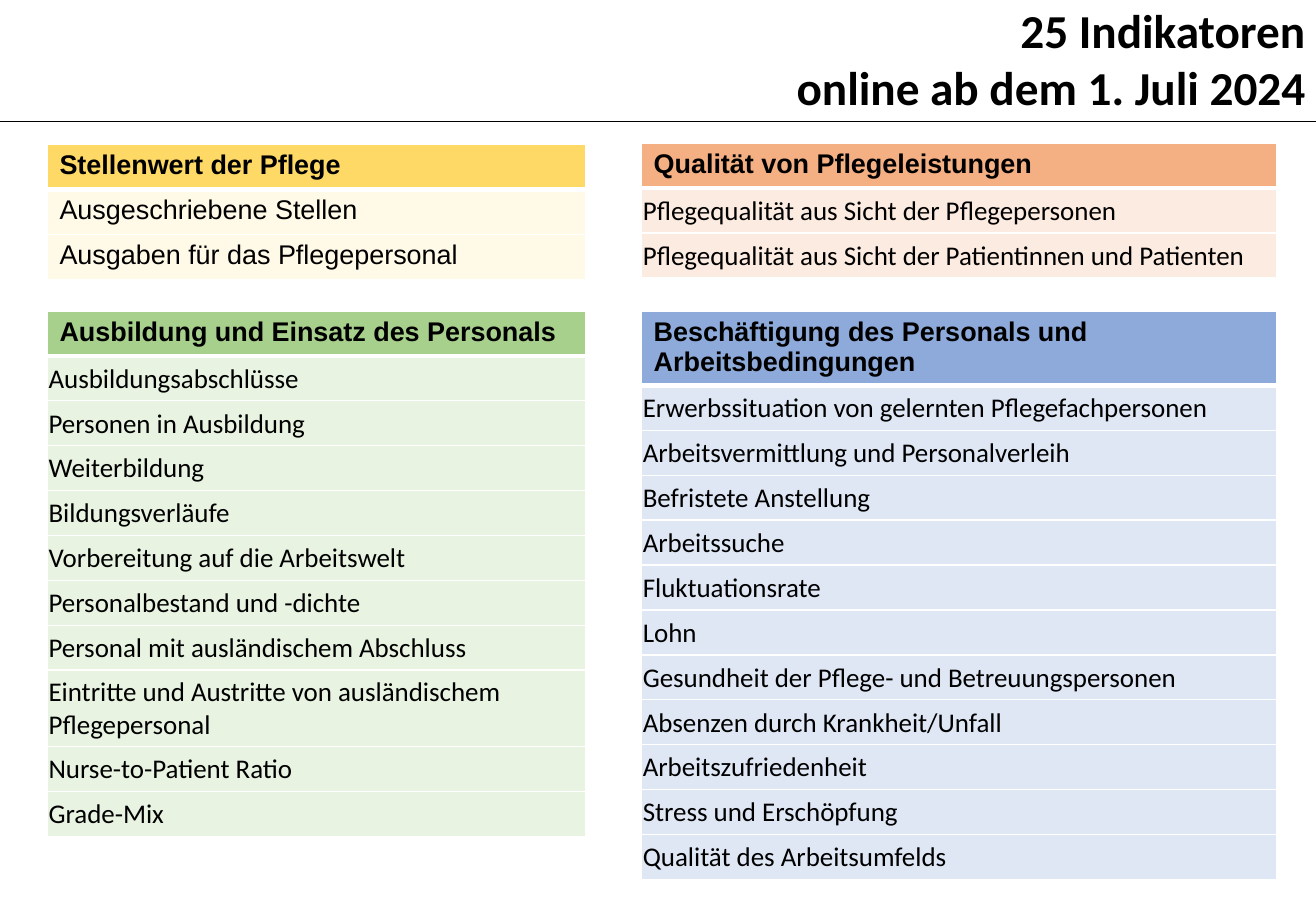
import pptx
import pptx.dml.color
import pptx.enum.shapes
import pptx.enum.text
import pptx.oxml
import pptx.oxml.ns
import pptx.util
from lxml import etree

PX = 9144  # 100 px to the inch
WIDTH, HEIGHT = 1083, 750
ROW = 37
TALL_ROW = 63
BLACK, WHITE = "000000", "FFFFFF"
ARIAL, CALIBRI = "Arial", "Calibri"
MIDDLE = pptx.enum.text.MSO_ANCHOR.MIDDLE

# Box, header height, header colour, row colour, row font, header, indicators
TOPICS = [
    ((39, 119, 443), ROW, "FFD966", "FFF9E7", ARIAL, "Stellenwert der Pflege", [
        "Ausgeschriebene Stellen",
        "Ausgaben für das Pflegepersonal",
    ]),
    ((39, 256, 443), ROW, "A8D08D", "E8F3E1", CALIBRI, "Ausbildung und Einsatz des Personals", [
        "Ausbildungsabschlüsse",
        "Personen in Ausbildung",
        "Weiterbildung",
        "Bildungsverläufe",
        "Vorbereitung auf die Arbeitswelt",
        "Personalbestand und -dichte",
        "Personal mit ausländischem Abschluss",
        "Eintritte und Austritte von ausländischem Pflegepersonal",
        "Nurse-to-Patient Ratio",
        "Grade-Mix",
    ]),
    ((528, 118, 523), ROW, "F4B083", "FCEBE0", CALIBRI, "Qualität von Pflegeleistungen", [
        "Pflegequalität aus Sicht der Pflegepersonen",
        "Pflegequalität aus Sicht der Patientinnen und Patienten",
    ]),
    ((528, 256, 523), 59, "8EAADB", "DFE7F5", CALIBRI,
     "Beschäftigung des Personals und Arbeitsbedingungen", [
        "Erwerbssituation von gelernten Pflegefachpersonen",
        "Arbeitsvermittlung und Personalverleih",
        "Befristete Anstellung",
        "Arbeitssuche",
        "Fluktuationsrate",
        "Lohn",
        "Gesundheit der Pflege- und Betreuungspersonen",
        "Absenzen durch Krankheit/Unfall",
        "Arbeitszufriedenheit",
        "Stress und Erschöpfung",
        "Qualität des Arbeitsumfelds",
    ]),
]
TALL_INDICATOR = "Eintritte und Austritte von ausländischem Pflegepersonal"


def px(length):
    return pptx.util.Emu(length * PX)


def colour(value):
    return pptx.dml.color.RGBColor.from_string(value)


def add_run(paragraph, text, font_name, size, bold):
    run = paragraph.add_run()
    run.text = text
    run.font.name = font_name
    run.font.size = pptx.util.Pt(size)
    run.font.bold = bold
    run.font.color.rgb = colour(BLACK)


def set_borders(cell, bottom_width):
    properties = cell._tc.get_or_add_tcPr()
    for side, width in (("L", 1), ("R", 1), ("T", 1), ("B", bottom_width)):
        line = etree.SubElement(properties, pptx.oxml.ns.qn(f"a:ln{side}"), w=str(pptx.util.Pt(width)))
        fill = etree.SubElement(line, pptx.oxml.ns.qn("a:solidFill"))
        etree.SubElement(fill, pptx.oxml.ns.qn("a:srgbClr"), val=WHITE)


def fill_cell(cell, text, background, font_name, bold, margins, bottom_width):
    set_borders(cell, bottom_width)
    cell.fill.solid()
    cell.fill.fore_color.rgb = colour(background)
    cell.margin_left, cell.margin_top, cell.margin_right, cell.margin_bottom = map(px, margins)
    add_run(cell.text_frame.paragraphs[0], text, font_name, 16, bold)


def add_heading(slide, left, top, width, height):
    # Rule under the heading
    rule = slide.shapes.add_connector(
        pptx.enum.shapes.MSO_CONNECTOR.STRAIGHT, 0, px(100), px(WIDTH), px(100))
    rule.line.color.rgb = colour(BLACK)
    rule.line.width = pptx.util.Pt(1)
    etree.SubElement(rule._element.spPr, pptx.oxml.ns.qn("a:effectLst"))

    # Two-line title
    title = slide.shapes.add_textbox(px(left), px(top), px(width), px(height))
    title.text_frame.word_wrap = True
    title.text_frame.vertical_anchor = MIDDLE
    paragraph = title.text_frame.paragraphs[0]
    paragraph.alignment = pptx.enum.text.PP_ALIGN.RIGHT
    add_run(paragraph, "25 Indikatoren", CALIBRI, 28, True)
    paragraph.add_line_break()
    add_run(paragraph, "online ab dem 1. Juli 2024", CALIBRI, 28, True)


def add_topic(slide, box, header_height, header_colour, row_colour, row_font, header, indicators):
    left, top, width = box
    heights = [header_height] + [TALL_ROW if text == TALL_INDICATOR else ROW for text in indicators]
    table = slide.shapes.add_table(
        len(heights), 1, px(left), px(top), px(width), px(sum(heights))).table
    table.first_row = False
    table.horz_banding = False
    for row, height in zip(table.rows, heights):
        row.height = px(height)

    # Header
    fill_cell(table.cell(0, 0), header, header_colour, ARIAL, True, (10, 5, 10, 3), 3)

    # Indicators
    margins = (1, 1, 1, 0) if row_font == CALIBRI else (10, 5, 10, 5)
    for index, text in enumerate(indicators, start=1):
        cell = table.cell(index, 0)
        fill_cell(cell, text, row_colour, row_font, False, margins, 1)
        if row_font == CALIBRI:
            cell.vertical_anchor = MIDDLE
    # Thick line shared by the header and the first indicator
    first_top = table.cell(1, 0)._tc.tcPr.find(pptx.oxml.ns.qn("a:lnT"))
    first_top.set("w", str(pptx.util.Pt(3)))


def main():
    presentation = pptx.Presentation()
    presentation.slide_width = px(WIDTH)
    presentation.slide_height = px(HEIGHT)
    slide = presentation.slides.add_slide(presentation.slide_layouts[6])
    add_heading(slide, 371, -2, 713, 100)
    for topic in TOPICS:
        add_topic(slide, *topic)
    presentation.save("out.pptx")


if __name__ == "__main__":
    main()
